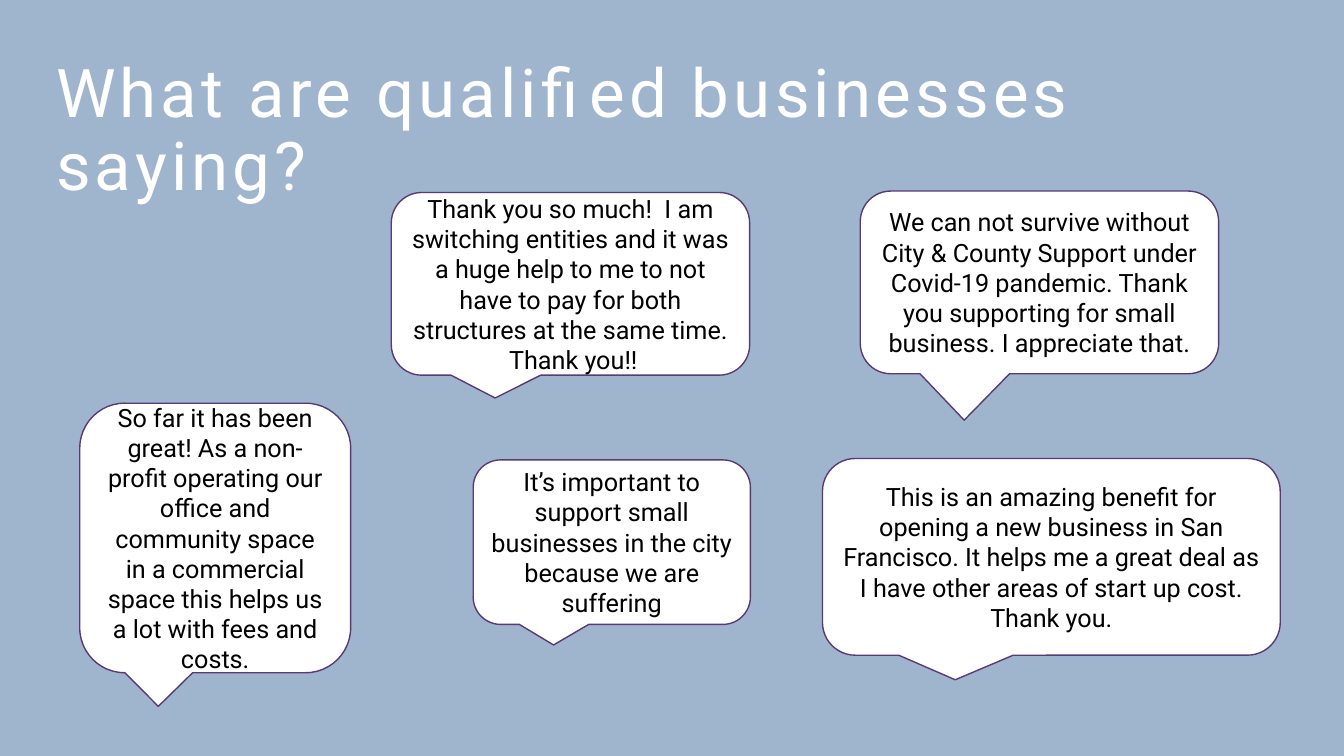
from dataclasses import dataclass

from pptx import Presentation
from pptx.dml.color import RGBColor
from pptx.enum.shapes import MSO_SHAPE as Shape
from pptx.enum.text import MSO_ANCHOR as Anchor, PP_ALIGN as Align
from pptx.util import Pt


@dataclass(frozen=True)
class Theme:
    font: str = "Roboto"
    background: RGBColor = RGBColor(0x9F, 0xB4, 0xCD)
    title: RGBColor = RGBColor(0xFF, 0xFF, 0xFF)
    bubble: RGBColor = RGBColor(0xFF, 0xFF, 0xFF)
    outline: RGBColor = RGBColor(0x59, 0x3A, 0x76)
    quote: RGBColor = RGBColor(0, 0, 0)
    title_size: int = 48
    quote_size: int = 18
    title_tracking: int = 3


THEME = Theme()
TAIL_X = -0.21
SHORT_TAIL, LONG_TAIL = 0.625, 0.754

# left, top, width, height in points, tail depth, words
QUOTES = [
    (587.5, 327.5, 327, 140.5, SHORT_TAIL,
     "This is an amazing benefit for opening a new business in San Francisco. "
     "It helps me a great deal as I have other areas of start up cost. Thank you."),
    (57, 288, 193.5, 192.5, SHORT_TAIL,
     "So far it has been great! As a non-profit operating our office and community "
     "space in a commercial space this helps us a lot with fees and costs."),
    (279.5, 137.5, 256, 130.5, SHORT_TAIL,
     "Thank you so much!  I am switching entities and it was a huge help to me "
     "to not have to pay for both structures at the same time.  Thank you!!"),
    (614.5, 136.5, 256, 130.5, LONG_TAIL,
     "We can not survive without City & County Support under Covid-19 pandemic. "
     "Thank you supporting for small business. I appreciate that."),
    (338, 328.5, 198, 117.5, SHORT_TAIL,
     "It’s important to support small businesses in the city because we are suffering"),
]


def style_text(p, size, color):
    for r in p.runs:
        r.font.name = THEME.font
        r.font.size = Pt(size)
        r.font.color.rgb = color


def add_title(s, text):
    tf = s.shapes.add_textbox(Pt(33), Pt(39), Pt(804), Pt(83.5)).text_frame
    tf.word_wrap = True
    tf.text = text
    p = tf.paragraphs[0]
    p.line_spacing = 0.9
    style_text(p, THEME.title_size, THEME.title)
    p.runs[0].font._element.set("spc", str(THEME.title_tracking * 100))


def add_quote(s, left, top, width, height, tail, text):
    sp = s.shapes.add_shape(Shape.ROUNDED_RECTANGULAR_CALLOUT,
                            Pt(left), Pt(top), Pt(width), Pt(height))
    sp.adjustments[0] = TAIL_X
    sp.adjustments[1] = tail
    sp.shadow.inherit = False
    sp.fill.solid()
    sp.fill.fore_color.rgb = THEME.bubble
    sp.line.color.rgb = THEME.outline
    sp.line.width = Pt(1)
    tf = sp.text_frame
    tf.word_wrap = True
    tf.vertical_anchor = Anchor.MIDDLE
    tf.text = text
    p = tf.paragraphs[0]
    p.alignment = Align.CENTER
    style_text(p, THEME.quote_size, THEME.quote)


def main():
    prs = Presentation()
    prs.slide_width, prs.slide_height = Pt(960), Pt(540)
    s = prs.slides.add_slide(prs.slide_layouts[6])
    s.background.fill.solid()
    s.background.fill.fore_color.rgb = THEME.background
    for quote in QUOTES:
        add_quote(s, *quote)
    add_title(s, "What are qualified businesses saying?")
    prs.save("out.pptx")


if __name__ == "__main__":
    main()
